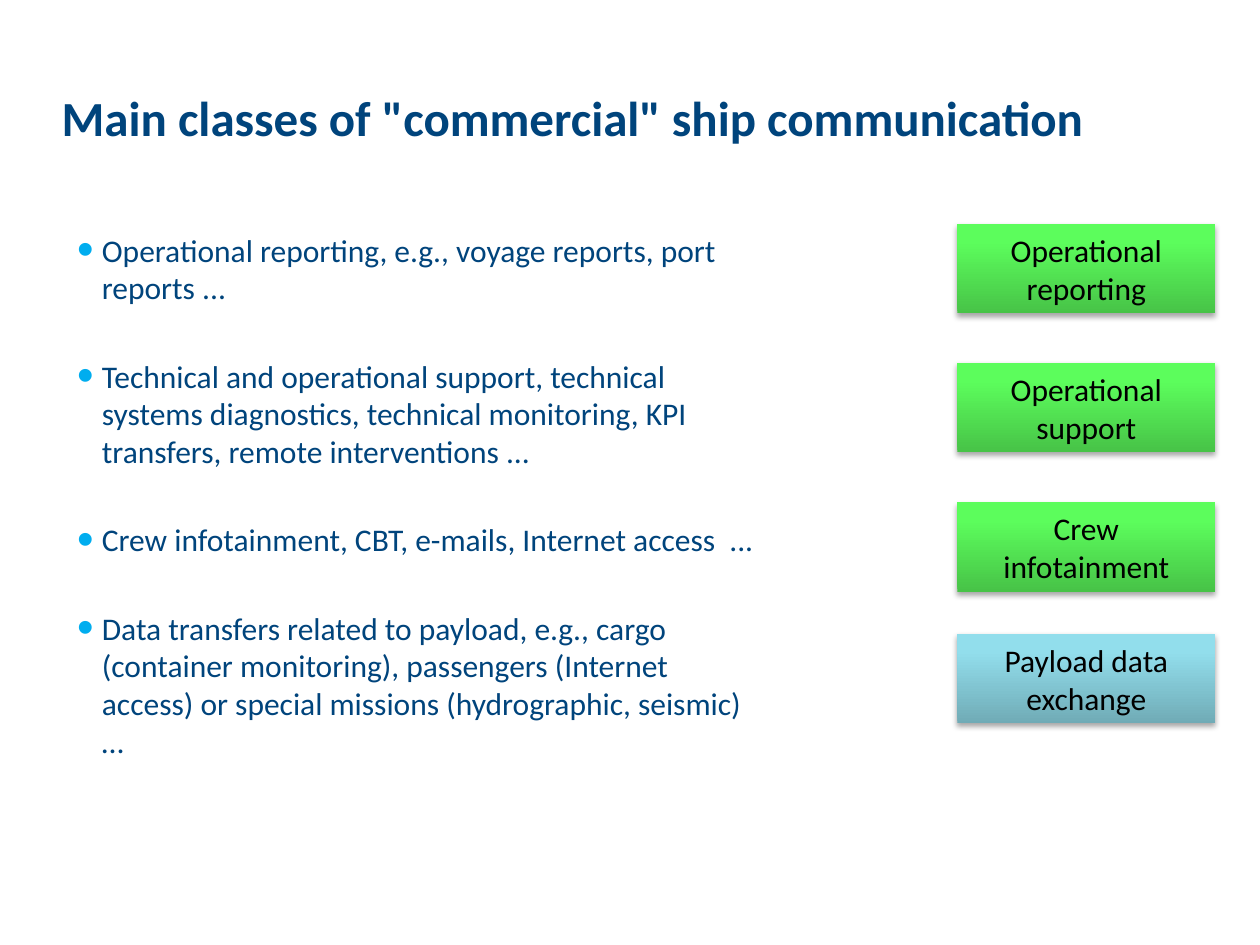
from copy import deepcopy
from dataclasses import dataclass

from lxml.etree import SubElement
from pptx import Presentation
from pptx.dml.color import RGBColor
from pptx.enum.shapes import MSO_SHAPE
from pptx.enum.text import MSO_ANCHOR, MSO_AUTO_SIZE, PP_ALIGN
from pptx.oxml.ns import qn
from pptx.util import Cm, Pt


@dataclass(frozen=True)
class Theme:
    font: str = "Calibri"
    navy: str = "00447C"
    bullet: str = "00ADEF"
    black: str = "000000"
    green: tuple = ("47C347", "5CFD5C", "5CFF5C")
    teal: tuple = ("70ABB6", "92DEEC", "90E1EF")
    title_size: int = 28
    text_size: int = 18
    item_gap: float = 28.8


class SlideBuilder:
    def __init__(self, slide, theme):
        self.slide = slide
        self.theme = theme

    def place(self, shape, left, top, width, height):
        shape.left, shape.top = Cm(left), Cm(top)
        shape.width, shape.height = Cm(width), Cm(height)

    def style(self, paragraph, size, color, align, bold=False):
        paragraph.alignment = align
        for run in paragraph.runs:
            run.font.name = self.theme.font
            run.font.size = Pt(size)
            run.font.bold = bold
            run.font.color.rgb = RGBColor.from_string(color)

    def title(self, text, *box):
        heading = self.slide.shapes.title
        self.place(heading, *box)
        frame = heading.text_frame
        frame.text = text
        frame.auto_size = MSO_AUTO_SIZE.NONE
        frame.vertical_anchor = MSO_ANCHOR.MIDDLE
        self.style(frame.paragraphs[0], self.theme.title_size,
                   self.theme.navy, PP_ALIGN.LEFT, bold=True)

    def bullets(self, items, *box):
        body = self.slide.placeholders[1]
        self.place(body, *box)
        frame = body.text_frame
        frame.text = "\n".join(items)
        frame.auto_size = MSO_AUTO_SIZE.NONE
        for index, paragraph in enumerate(frame.paragraphs):
            self.add_bullet(paragraph)
            paragraph.space_before = Pt(self.theme.item_gap if index else 0)
            self.style(paragraph, self.theme.text_size,
                       self.theme.navy, PP_ALIGN.LEFT)

    def add_bullet(self, paragraph):
        properties = paragraph._p.get_or_add_pPr()
        indent = Cm(0.5)
        properties.set("marL", str(indent))
        properties.set("indent", str(-indent))
        color = SubElement(properties, qn("a:buClr"))
        SubElement(color, qn("a:srgbClr"), val=self.theme.bullet)
        SubElement(properties, qn("a:buSzPct"), val="150000")
        SubElement(properties, qn("a:buFont"), typeface="Arial")
        SubElement(properties, qn("a:buChar"), char="•")

    def class_box(self, text, colors, left, top, width, height):
        box = self.slide.shapes.add_shape(
            MSO_SHAPE.RECTANGLE, Cm(left), Cm(top), Cm(width), Cm(height))
        box.line.fill.background()
        self.add_gradient(box, colors)
        self.add_shadow(box)
        frame = box.text_frame
        frame.text = text
        frame.word_wrap = True
        frame.vertical_anchor = MSO_ANCHOR.MIDDLE
        self.style(frame.paragraphs[0], self.theme.text_size,
                   self.theme.black, PP_ALIGN.CENTER)

    def add_gradient(self, shape, colors):
        shape.fill.gradient()
        shape.fill.gradient_angle = 90
        # The default gradient has two stops; a third is needed
        stops = shape._element.spPr.find(".//" + qn("a:gsLst"))
        stops.append(deepcopy(stops[-1]))
        for stop, color, position in zip(
                shape.fill.gradient_stops, colors, (0, 0.8, 1)):
            stop.color.rgb = RGBColor.from_string(color)
            stop.position = position

    def add_shadow(self, shape):
        shape.shadow.inherit = False
        effects = shape._element.spPr.find(qn("a:effectLst"))
        shadow = SubElement(
            effects, qn("a:outerShdw"), blurRad=str(Pt(3.15)),
            dist=str(Pt(1.8)), dir="5400000", rotWithShape="0")
        color = SubElement(shadow, qn("a:srgbClr"), val=self.theme.black)
        SubElement(color, qn("a:alpha"), val="35000")


def main():
    theme = Theme()
    presentation = Presentation()
    presentation.slide_width, presentation.slide_height = Cm(25.4), Cm(19.05)
    slide = presentation.slides.add_slide(presentation.slide_layouts[1])
    builder = SlideBuilder(slide, theme)

    # Heading and list of communication classes
    builder.title('Main classes of "commercial" ship communication',
                  0.99, 0.76, 23.42, 3.18)
    builder.bullets([
        "Operational reporting, e.g., voyage reports, port reports ...",
        "Technical and operational support, technical systems diagnostics, "
        "technical monitoring, KPI transfers, remote interventions ...",
        "Crew infotainment, CBT, e-mails, Internet access  ...",
        "Data transfers related to payload, e.g., cargo (container "
        "monitoring), passengers (Internet access) or special missions "
        "(hydrographic, seismic) …",
    ], 1.3, 4.52, 14.4, 12.42)

    # One box beside each class
    for label, colors, top in (
            ("Operational reporting", theme.green, 4.52),
            ("Operational support", theme.green, 7.32),
            ("Crew infotainment", theme.green, 10.13),
            ("Payload data exchange", theme.teal, 12.78)):
        builder.class_box(label, colors, 19.3, top, 5.2, 1.8)

    presentation.save("out.pptx")


if __name__ == "__main__":
    main()
